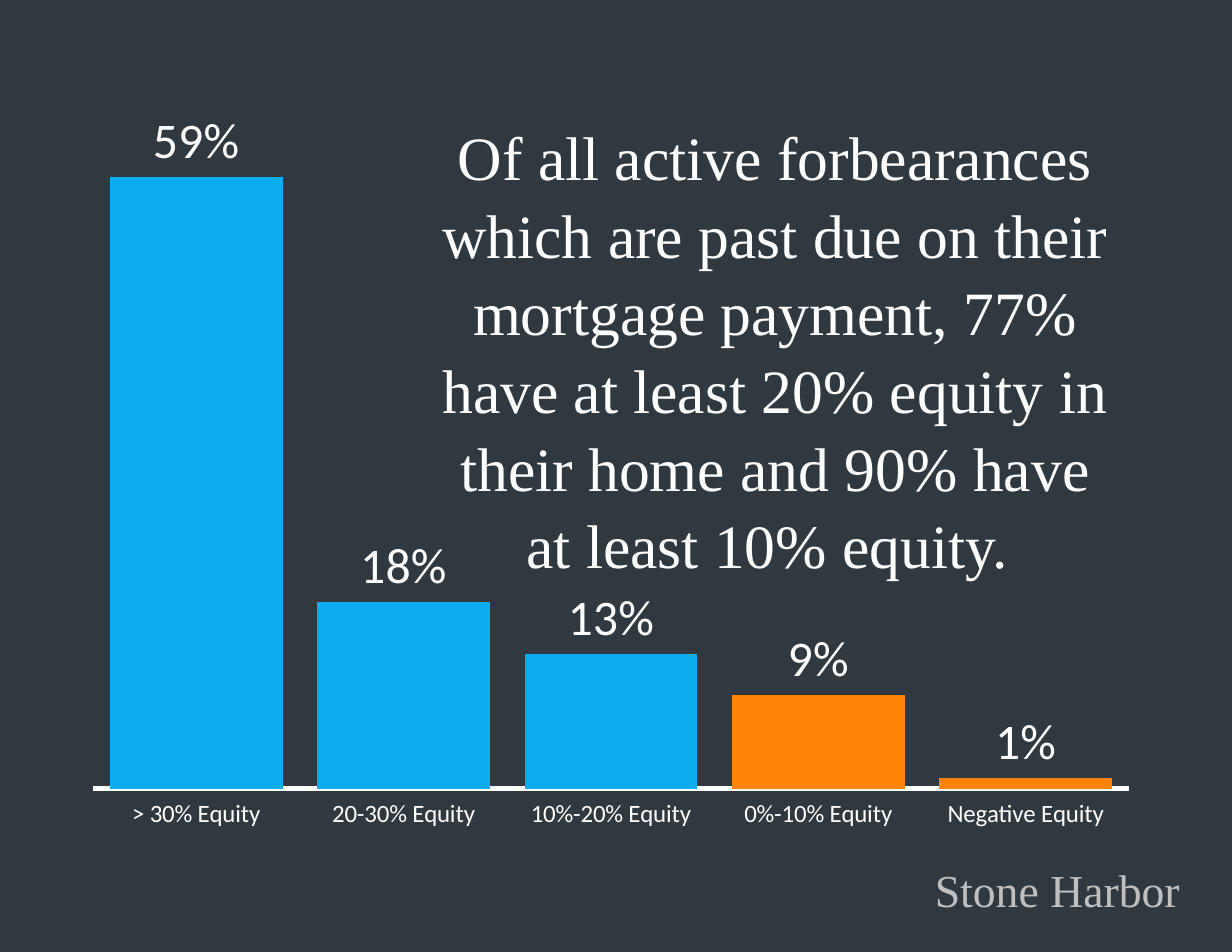
from pptx import Presentation
from pptx.chart.data import CategoryChartData
from pptx.dml.color import RGBColor
from pptx.enum.chart import XL_CHART_TYPE, XL_LABEL_POSITION, XL_TICK_LABEL_POSITION, XL_TICK_MARK
from pptx.enum.text import PP_ALIGN
from pptx.util import Emu, Pt

COLUMNS = XL_CHART_TYPE.COLUMN_CLUSTERED
OUTSIDE_END = XL_LABEL_POSITION.OUTSIDE_END
LABELS_LOW = XL_TICK_LABEL_POSITION.LOW
NO_TICKS = XL_TICK_MARK.NONE
CENTER, RIGHT = PP_ALIGN.CENTER, PP_ALIGN.RIGHT

PX = 914400 // 112
COLORS = {
    "background": "2F393F",
    "text": "FFFFFF",
    "source": "BFBFBF",
    "high_equity": "0CADEF",
    "low_equity": "FF8306",
}
EQUITY_SHARES = {
    "> 30% Equity": 0.59,
    "20-30% Equity": 0.18,
    "10%-20% Equity": 0.13,
    "0%-10% Equity": 0.09,
    "Negative Equity": 0.01,
}
HIGH_EQUITY_COUNT = 3
MESSAGE = ("Of all active forbearances which are past due on their mortgage payment, "
           "77% have at least 20% equity in their home and 90% have at least 10% equity. ")


def px(*lengths):
    return [Emu(length * PX) for length in lengths]


def color(name):
    return RGBColor.from_string(COLORS[name])


def style_font(font, name, size, color_name):
    font.name = name
    font.size = Pt(size)
    font.color.rgb = color(color_name)


def add_text(page, bounds, text, size, color_name, align, wrap=True, spacing=None):
    box = page.shapes.add_textbox(*px(*bounds))
    box.text_frame.word_wrap = wrap
    box.text_frame.text = text
    para = box.text_frame.paragraphs[0]
    para.alignment = align
    para.line_spacing = spacing
    style_font(para.runs[0].font, "Times New Roman", size, color_name)


def add_equity_chart(page, bounds):
    data = CategoryChartData(number_format="0%")
    data.categories = list(EQUITY_SHARES)
    data.add_series("Series 1", list(EQUITY_SHARES.values()))
    chart = page.shapes.add_chart(COLUMNS, *px(*bounds), data).chart
    chart.has_legend = False
    chart.has_title = False
    chart.font.name = "Calibri"
    chart.font.size = Pt(10)

    # Axes
    values = chart.value_axis
    values.visible = False
    values.has_major_gridlines = False
    values.minimum_scale, values.maximum_scale = 0, 0.7
    categories = chart.category_axis
    categories.major_tick_mark = categories.minor_tick_mark = NO_TICKS
    categories.tick_label_position = LABELS_LOW
    categories.format.line.width = Pt(3)
    categories.format.line.color.rgb = color("text")
    style_font(categories.tick_labels.font, "Calibri", 16, "text")

    # Columns
    plot = chart.plots[0]
    plot.gap_width = 20
    plot.overlap = -27
    plot.vary_by_categories = False
    series = plot.series[0]
    series.invert_if_negative = False
    series.format.fill.solid()
    series.format.fill.fore_color.rgb = color("low_equity")
    for index in range(HIGH_EQUITY_COUNT):
        fill = series.points[index].format.fill
        fill.solid()
        fill.fore_color.rgb = color("high_equity")

    # Value labels
    labels = series.data_labels
    labels.show_value = True
    labels.position = OUTSIDE_END
    labels.number_format = "0%"
    labels.number_format_is_linked = False
    style_font(labels.font, "Calibri", 32, "text")


def main():
    deck = Presentation()
    deck.slide_width, deck.slide_height = px(1232, 952)
    page = deck.slides.add_slide(deck.slide_layouts[6])
    page.background.fill.solid()
    page.background.fill.fore_color.rgb = color("background")

    add_text(page, (921, 856, 270, 67), "Stone Harbor", 29.4, "source", RIGHT, wrap=False)
    add_equity_chart(page, (71, 47, 1080, 799))
    add_text(page, (428, 110, 694, 459), MESSAGE, 39.6, "text", CENTER, spacing=1.05)
    deck.save("out.pptx")


if __name__ == "__main__":
    main()
